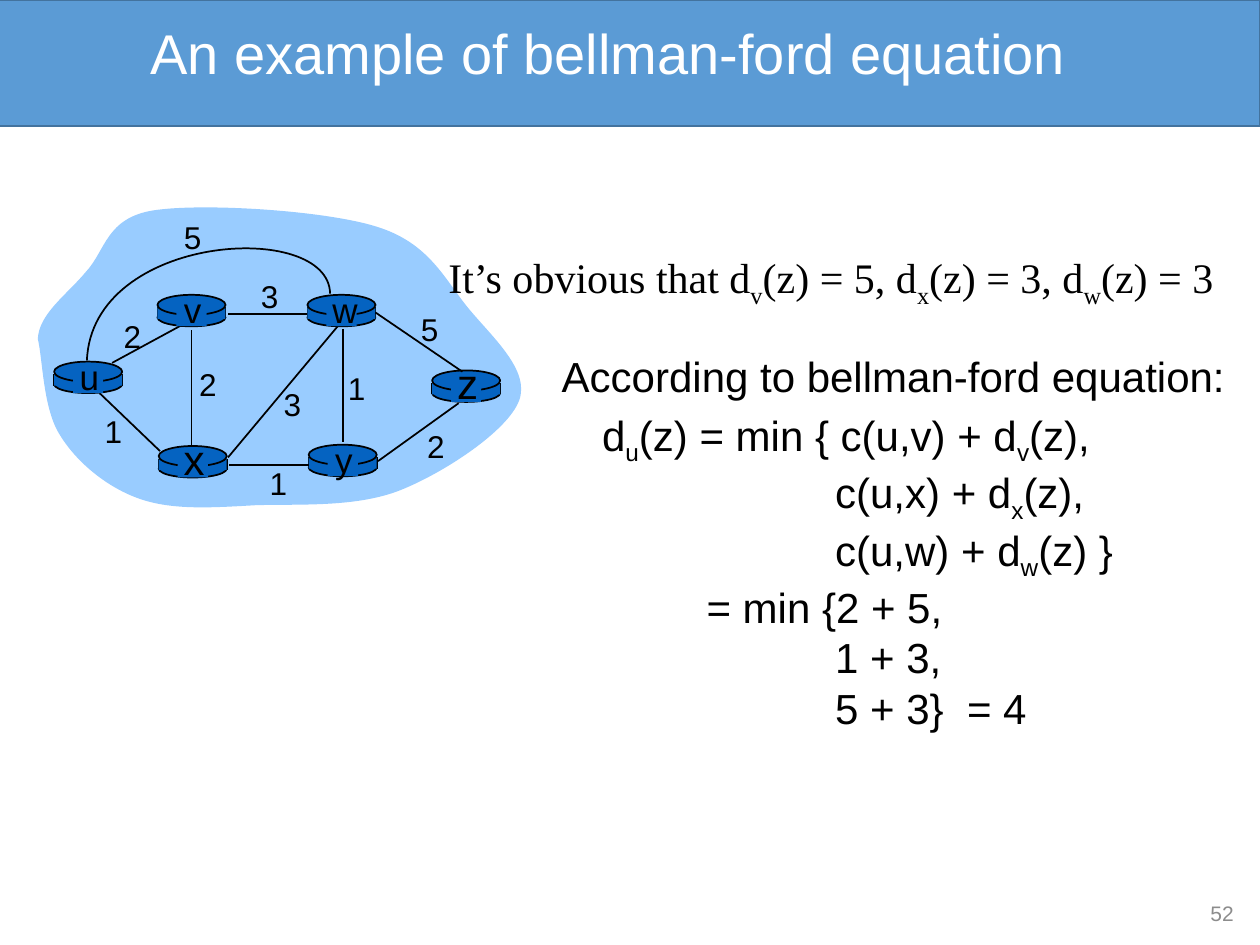
import pptx
import pptx.dml.color
import pptx.enum.shapes
import pptx.enum.text
import pptx.util
from lxml import etree
from pptx.util import Inches

SHAPE = pptx.enum.shapes.MSO_SHAPE
ALIGN = pptx.enum.text.PP_ALIGN
ANCHOR = pptx.enum.text.MSO_ANCHOR
DRAWING_NS = "{http://schemas.openxmlformats.org/drawingml/2006/main}"


def rgb(hex_code):
    return pptx.dml.color.RGBColor.from_string(hex_code)


class SlideBuilder:
    font = "Arial"
    ink = "000000"
    router_fill = "0563C1"

    def __init__(self, s):
        self.s = s

    def paint(self, sp, fill=None, line=None):
        sp.shadow.inherit = False
        if fill:
            sp.fill.solid()
            sp.fill.fore_color.rgb = rgb(fill)
        else:
            sp.fill.background()
        if line:
            sp.line.color.rgb = rgb(line)
            sp.line.width = pptx.util.Pt(1)
        else:
            sp.line.fill.background()

    def shape(self, kind, x, y, w, h, fill, line=None):
        sp = self.s.shapes.add_shape(kind, Inches(x), Inches(y), Inches(w), Inches(h))
        self.paint(sp, fill, line)

    def curve(self, points, closed, fill=None, line=None):
        """Draw cubic Beziers: a start point, then two control points and an end for each."""
        start, *rest = [(Inches(x), Inches(y)) for x, y in points]
        builder = self.s.shapes.build_freeform(*start)
        builder.add_line_segments(rest, close=closed)
        sp = builder.convert_to_shape()
        segments = list(sp._element.iter(DRAWING_NS + "lnTo"))
        for i in range(0, len(segments), 3):
            bezier = etree.Element(DRAWING_NS + "cubicBezTo")
            segments[i].addprevious(bezier)
            for segment in segments[i:i + 3]:
                bezier.append(segment[0])
                segment.getparent().remove(segment)
        self.paint(sp, fill, line)

    def line(self, x1, y1, x2, y2):
        c = self.s.shapes.add_connector(pptx.enum.shapes.MSO_CONNECTOR.STRAIGHT,
                                        Inches(x1), Inches(y1), Inches(x2), Inches(y2))
        c.line.color.rgb = rgb(self.ink)
        c.line.width = pptx.util.Pt(1)
        etree.SubElement(c._element.spPr, DRAWING_NS + "effectLst")

    def text(self, x, y, w, h, paragraphs, size, color=ink, font=font, align=ALIGN.LEFT,
             anchor=ANCHOR.TOP, wrap=True, spacing=None):
        """Paragraphs are (indent, runs); a run is a string or (string, rPr attributes)."""
        tf = self.s.shapes.add_textbox(Inches(x), Inches(y), Inches(w), Inches(h)).text_frame
        tf.word_wrap = wrap
        tf.vertical_anchor = anchor
        for i, (indent, runs) in enumerate(paragraphs):
            p = tf.add_paragraph() if i else tf.paragraphs[0]
            p.alignment = align
            if spacing:
                p.line_spacing = spacing
            if indent:
                p._p.get_or_add_pPr().set("marL", str(Inches(indent)))
            for run in runs:
                content, attributes = (run, {}) if isinstance(run, str) else run
                r = p.add_run()
                r.text = content
                r.font.name = font
                r.font.size = pptx.util.Pt(size)
                r.font.color.rgb = rgb(color)
                for name, value in attributes.items():
                    r._r.get_or_add_rPr().set(name, value)

    def centered_label(self, cx, cy, label, size):
        w, h = 0.36, size / 60 + 0.1
        self.text(cx - w / 2, cy - h / 2, w, h, [(0, [label])], size,
                  align=ALIGN.CENTER, wrap=False)

    def router(self, x, y):
        w = 0.54
        self.shape(SHAPE.OVAL, x, y + 0.11, w, 0.14, self.router_fill, self.ink)
        for side in (x, x + w):
            self.line(side, y + 0.1, side, y + 0.19)
        self.shape(SHAPE.RECTANGLE, x, y + 0.1, w, 0.09, self.router_fill)
        self.shape(SHAPE.OVAL, x, y, w, 0.16, self.router_fill, self.ink)

    def router_name(self, x, y, name, size):
        self.shape(SHAPE.RECTANGLE, x + 0.15, y + 0.02, 0.24, 0.23, self.router_fill)
        self.centered_label(x + 0.28, y + (0.12 if size == 20 else 0.1), name, size)


def sub(letter):
    return letter, {"baseline": "-25000"}


CLOUD = [(0.3, 2.69),
         (0.31, 2.49), (0.53, 2.34), (0.68, 2.16), (0.84, 1.99), (0.84, 1.73), (1.22, 1.67),
         (1.61, 1.61), (2.58, 1.67), (2.99, 1.8), (3.41, 1.93), (3.53, 2.22), (3.72, 2.45),
         (3.91, 2.68), (4.21, 2.94), (4.12, 3.18), (4.03, 3.42), (3.53, 3.75), (3.18, 3.89),
         (2.83, 4.03), (2.37, 4), (2.03, 4.01), (1.68, 4.03), (1.37, 4.05), (1.11, 3.96),
         (0.85, 3.87), (0.61, 3.67), (0.48, 3.46), (0.34, 3.25), (0.34, 2.85), (0.3, 2.69)]
U_TO_W = [(2.62, 2.33), (2.61, 1.74), (0.73, 1.85), (0.69, 2.86)]
ROUTERS = [(0.43, 2.87, "u", 20), (1.26, 3.54, "x", 24), (1.25, 2.34, "v", 20),
           (2.44, 2.34, "w", 20), (2.45, 3.53, "y", 20), (3.43, 2.94, "z", 24)]
LINKS = [(2.72, 2.61, 2.72, 3.51), (1.52, 2.62, 1.52, 3.55), (1.81, 3.63, 2.68, 2.59),
         (3, 3.66, 3.64, 3.2), (2.45, 3.69, 1.82, 3.69), (1.27, 3.58, 0.79, 3.12),
         (2.44, 2.49, 1.81, 2.49), (3.67, 2.95, 2.98, 2.48)]
COSTS = [(1.05, 2.67, "2"), (1.65, 3.05, "2"), (0.9, 3.42, "1"), (2.32, 3.21, "3"),
         (2.21, 3.83, "1"), (2.83, 3.08, "1"), (3.46, 3.54, "2"), (3.41, 2.61, "5"),
         (2.14, 2.35, "3"), (1.53, 1.88, "5")]
TERM_INDENT = 1.85
EQUATION = [
    (0, ["d", sub("u"), "(z) = min { c(u,v) + d", sub("v"), "(z),"]),
    (TERM_INDENT, ["c(u,x) + d", sub("x"), "(z),"]),
    (TERM_INDENT, ["c(u,w) + d", sub("w"), "(z) }"]),
    (0.83, ["= min {2 + 5,"]),
    (TERM_INDENT, ["1 + 3,"]),
    (TERM_INDENT, ["5 + 3}", (" ", {"spc": "667"}), "= 4"]),
]


def main():
    prs = pptx.Presentation()
    prs.slide_width, prs.slide_height = Inches(10), Inches(7.5)
    b = SlideBuilder(prs.slides.add_slide(prs.slide_layouts[6]))

    b.shape(SHAPE.RECTANGLE, -0.02, 0, 10.02, 1, "5B9BD5", "43739E")
    b.text(0.58, -0.03, 8.5, 0.96, [(0, ["An example of bellman-ford equation"])], 32,
           color="FFFFFF", align=ALIGN.CENTER, anchor=ANCHOR.MIDDLE, spacing=0.9)

    b.curve(CLOUD, True, fill="99CCFF")
    b.line(0.89, 2.88, 1.48, 2.56)
    for x, y, name, size in ROUTERS:
        b.router(x, y)
    for link in LINKS:
        b.line(*link)
    b.curve(U_TO_W, False, line=b.ink)
    for router in ROUTERS:
        b.router_name(*router)
    for cx, cy, cost in COSTS:
        b.centered_label(cx, cy, cost, 18)

    known = ["It’s obvious that d", sub("v"), "(z) = 5, d", sub("x"),
             "(z) = 3, d", sub("w"), "(z) = 3"]
    b.text(3.46, 1.95, 6.38, 0.5, [(0, known)], 24, font="Times New Roman", wrap=False)
    b.text(4.68, 3.2, 4.96, 2.52, EQUATION, 24)
    b.text(4.36, 2.73, 5.48, 0.5, [(0, ["According to bellman-ford equation:"])], 24)
    b.text(9.17, 7.05, 0.72, 0.4, [(0, ["52"])], 12, color="8C8C8C",
           align=ALIGN.RIGHT, anchor=ANCHOR.MIDDLE)
    prs.save("out.pptx")


if __name__ == "__main__":
    main()
